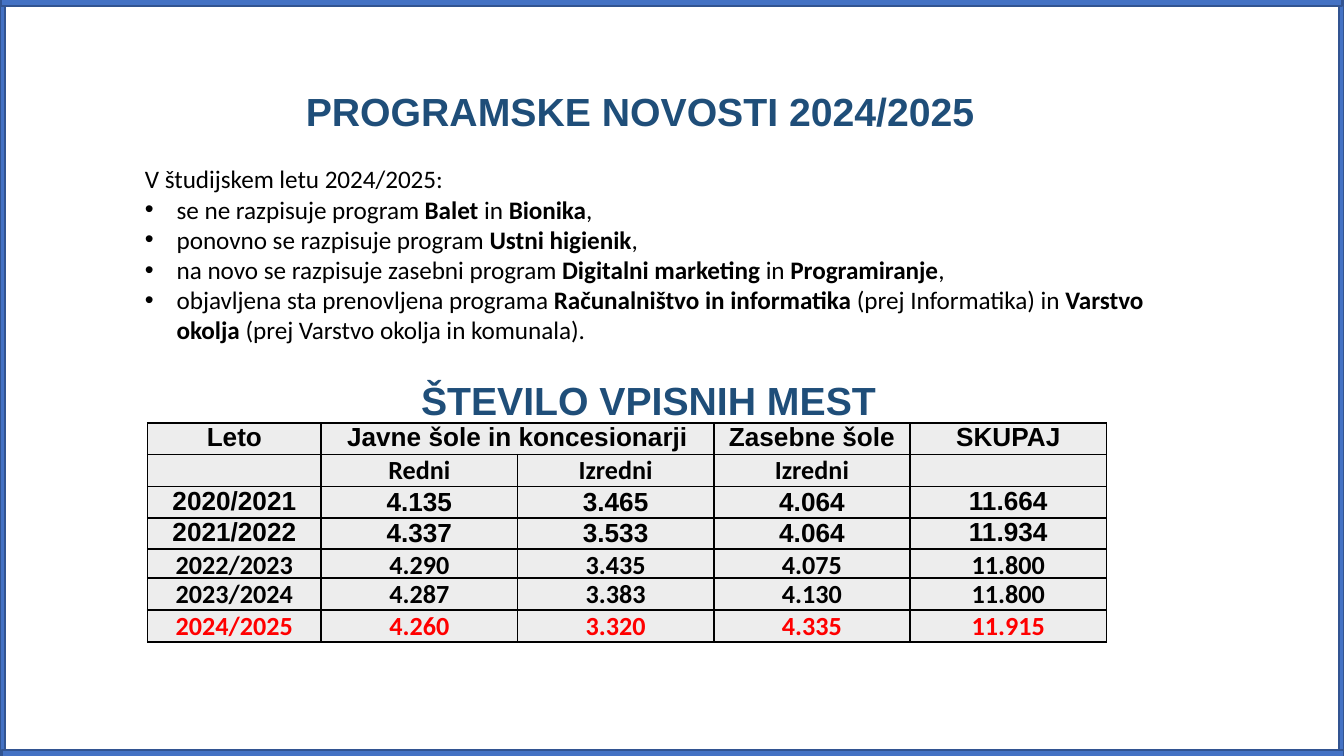
from dataclasses import dataclass

from lxml import etree
from pptx import Presentation
from pptx.dml.color import RGBColor
from pptx.enum.shapes import MSO_SHAPE
from pptx.enum.text import MSO_ANCHOR, PP_ALIGN
from pptx.oxml.ns import qn
from pptx.util import Cm, Pt

RECT = MSO_SHAPE.RECTANGLE
TOP, MIDDLE, BOTTOM = MSO_ANCHOR.TOP, MSO_ANCHOR.MIDDLE, MSO_ANCHOR.BOTTOM
CENTER = PP_ALIGN.CENTER

COLORS = {
    "title": "1F4E79", "text": "000000", "new": "FF0000",
    "cell": "EDEDED", "bar": "4472C4", "edge": "325491",
}
COLS = [3.28] + [3.71] * 4
HEIGHTS = {"Arial": 0.57, "Calibri": 0.6}
LEFT = 2.79


@dataclass
class Title:
    text: str
    left: float
    top: float


@dataclass
class Row:
    cells: list[str]
    font: str = "Calibri"
    color: str = "text"
    anchor: MSO_ANCHOR = MIDDLE


@dataclass
class Grid:
    top: float
    rows: list[Row]


@dataclass
class Bar:
    left: float
    top: float
    width: float
    height: float
    turn: int = 0


HEAD = Title("PROGRAMSKE NOVOSTI 2024/2025", LEFT, 1.45)
SUB = Title("ŠTEVILO VPISNIH MEST", 2.95, 6.91)

# Asterisks enclose bold words
INTRO = "V študijskem letu 2024/2025:"
NEWS = [
    "se ne razpisuje program *Balet* in *Bionika*,",
    "ponovno se razpisuje program *Ustni higienik*,",
    "na novo se razpisuje zasebni program *Digitalni marketing *in* Programiranje*,",
    "objavljena sta prenovljena programa *Računalništvo in informatika *"
    "(prej Informatika) in *Varstvo okolja *(prej Varstvo okolja in komunala).",
]

PAST = Grid(8, [
    Row(["Leto", "Javne šole in koncesionarji", "", "Zasebne šole", "SKUPAJ"],
        "Arial", anchor=TOP),
    Row(["", "Redni", "Izredni", "Izredni", ""], anchor=TOP),
    Row(["2020/2021", "4.135", "3.465", "4.064", "11.664"], "Arial"),
    Row(["2021/2022", "4.337", "3.533", "4.064", "11.934"], "Arial"),
    Row(["2022/2023", "4.290", "3.435", "4.075", "11.800"]),
])
LAST = Grid(10.93, [Row(["2023/2024", "4.287", "3.383", "4.130", "11.800"])])
NEXT = Grid(11.54, [Row(["2024/2025", "4.260", "3.320", "4.335", "11.915"], color="new")])

BARS = [
    Bar(25.3, 0, 0.1, 14.29),
    Bar(0, 0, 0.1, 14.29),
    Bar(12.62, -12.62, 0.13, 25.35, 90),
    Bar(12.65, 1.57, 0.13, 25.35, 90),
]


def paint(name: str) -> RGBColor:
    return RGBColor.from_string(COLORS[name])


def style(font, color: str, **values) -> None:
    for key, value in values.items():
        setattr(font, key, value)
    font.color.rgb = paint(color)


def add_title(slide, item: Title) -> None:
    box = slide.shapes.add_textbox(Cm(item.left), Cm(item.top), Cm(18.62), Cm(1.19))
    frame = box.text_frame
    form = {
        "word_wrap": True, "vertical_anchor": BOTTOM,
        "margin_left": Cm(0.19), "margin_right": Cm(0.19),
        "margin_top": Cm(0.1), "margin_bottom": Cm(0.1),
    }
    for key, value in form.items():
        setattr(frame, key, value)
    para = frame.paragraphs[0]
    para.alignment = CENTER
    run = para.add_run()
    run.text = item.text
    style(run.font, "title", name="Arial", size=Pt(21), bold=True)


def add_runs(para, text: str) -> None:
    for i, part in enumerate(text.split("*")):
        if part:
            run = para.add_run()
            run.text = part
            style(run.font, "text", name="Calibri", size=Pt(13.5), bold=i % 2 == 1)


def add_news(slide) -> None:
    box = slide.shapes.add_textbox(Cm(2.49), Cm(2.97), Cm(19.56), Cm(4.29))
    frame = box.text_frame
    frame.word_wrap = True
    add_runs(frame.paragraphs[0], INTRO)
    for text in NEWS:
        para = frame.add_paragraph()
        props = para._p.get_or_add_pPr()
        props.set("marL", str(Cm(0.6)))
        props.set("indent", str(-Cm(0.6)))
        etree.SubElement(props, qn("a:buFont")).set("typeface", "Arial")
        etree.SubElement(props, qn("a:buChar")).set("char", "•")
        add_runs(para, text)


def add_edges(cell) -> None:
    props = cell._tc.get_or_add_tcPr()
    for side in ("lnL", "lnR", "lnT", "lnB"):
        line = etree.SubElement(props, qn(f"a:{side}"), w=str(Pt(1)))
        fill = etree.SubElement(line, qn("a:solidFill"))
        etree.SubElement(fill, qn("a:srgbClr"), val=COLORS["text"])


def fill_cell(cell, text: str, row: Row, anchor: MSO_ANCHOR) -> None:
    add_edges(cell)
    form = {
        "margin_left": Cm(0.15), "margin_right": Cm(0.15),
        "margin_top": 0, "margin_bottom": 0, "vertical_anchor": anchor,
    }
    for key, value in form.items():
        setattr(cell, key, value)
    cell.fill.solid()
    cell.fill.fore_color.rgb = paint("cell")
    para = cell.text_frame.paragraphs[0]
    para.alignment = CENTER
    if text:
        run = para.add_run()
        run.text = text
        style(run.font, row.color, name=row.font, size=Pt(14), bold=True)
    else:
        # Keeps an empty cell from stretching its row
        end = etree.SubElement(para._p, qn("a:endParaRPr"), sz="1400")
        etree.SubElement(end, qn("a:latin"), typeface=row.font)


def add_grid(slide, grid: Grid):
    highs = [HEIGHTS[row.font] for row in grid.rows]
    frame = slide.shapes.add_table(
        len(highs), len(COLS), Cm(LEFT), Cm(grid.top), Cm(sum(COLS)), Cm(sum(highs)))
    table = frame.table
    table.first_row = table.horz_banding = False
    for col, width in zip(table.columns, COLS):
        col.width = Cm(width)
    for r, row in enumerate(grid.rows):
        table.rows[r].height = Cm(highs[r])
        for c, text in enumerate(row.cells):
            anchor = row.anchor if 0 < c < len(COLS) - 1 else TOP
            fill_cell(table.cell(r, c), text, row, anchor)
    return table


def add_bar(slide, bar: Bar) -> None:
    shape = slide.shapes.add_shape(
        RECT, Cm(bar.left), Cm(bar.top), Cm(bar.width), Cm(bar.height))
    shape.rotation = bar.turn
    shape.shadow.inherit = False
    shape.fill.solid()
    shape.fill.fore_color.rgb = paint("bar")
    shape.line.color.rgb = paint("edge")
    shape.line.width = Pt(1)


def main() -> None:
    deck = Presentation()
    deck.slide_width, deck.slide_height = Cm(25.4), Cm(14.29)
    slide = deck.slides.add_slide(deck.slide_layouts[6])

    # Headings, news and past years
    add_title(slide, HEAD)
    past = add_grid(slide, PAST)
    past.cell(0, 1).merge(past.cell(0, 2))
    add_title(slide, SUB)
    add_news(slide)
    add_grid(slide, LAST)

    # Frame around the slide, then the new year
    for bar in BARS:
        add_bar(slide, bar)
    add_grid(slide, NEXT)
    deck.save("out.pptx")


if __name__ == "__main__":
    main()
